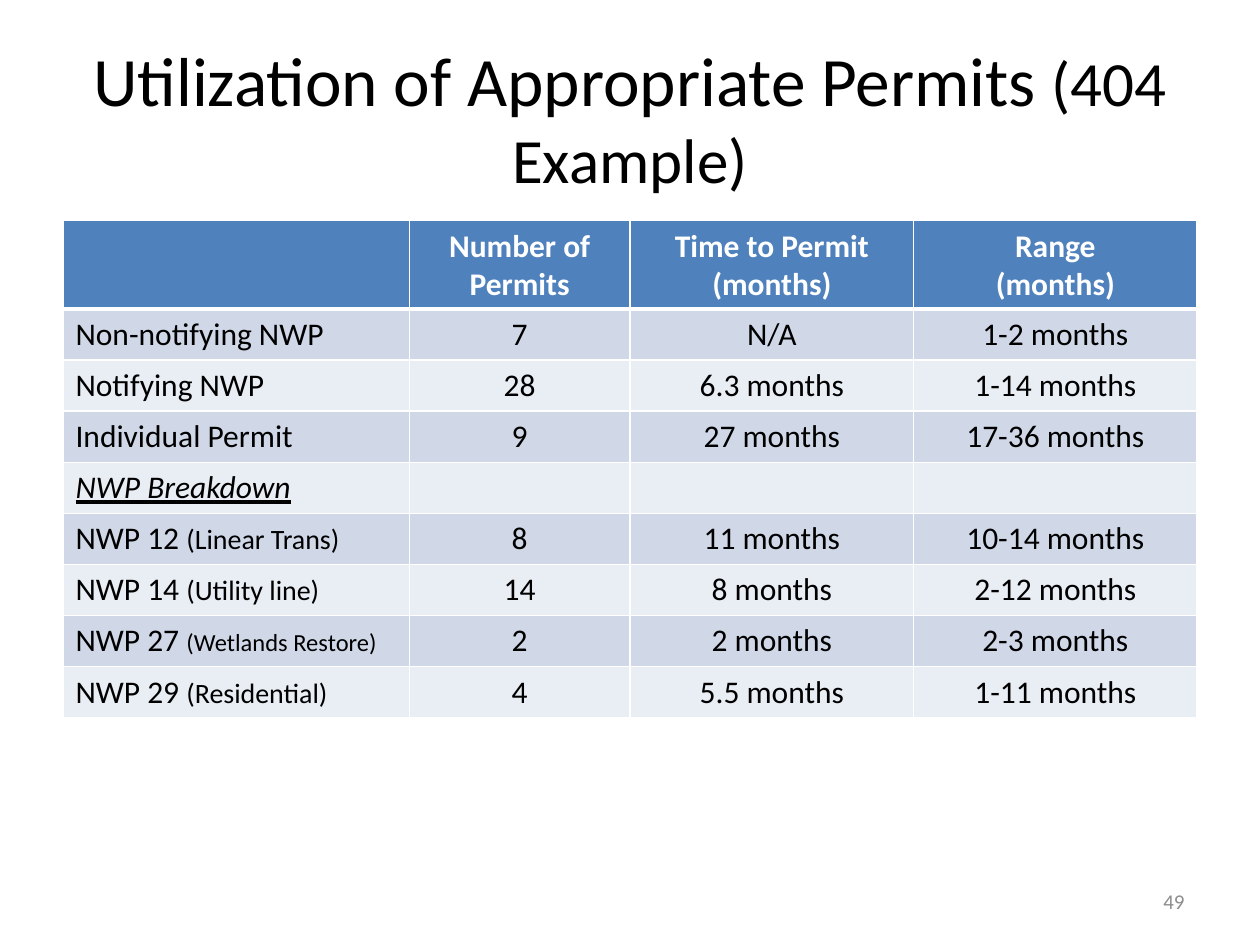
from lxml import etree
from pptx import Presentation
from pptx.dml.color import RGBColor
from pptx.enum.text import MSO_ANCHOR, PP_ALIGN
from pptx.oxml.ns import qn
from pptx.util import Cm, Pt

LEFT, CENTER, RIGHT = PP_ALIGN.LEFT, PP_ALIGN.CENTER, PP_ALIGN.RIGHT
MIDDLE = MSO_ANCHOR.MIDDLE
FONT = "Calibri"
BLACK, WHITE, GRAY = "000000", "FFFFFF", "8C8C8C"
BLUE, BANDS = "4F81BD", ("D0D8E8", "E9EDF4")

WIDTHS = (6.98, 4.45, 5.72, 5.71)
HEAD_H, ROW_H = 1.78, 1.03
HEADS = ([], ["Number of Permits"], ["Time to Permit", "(months)"],
         ["Range", "(months)"])
# Permit, small note, note size, number, time, range
ROWS = (
    ("Non-notifying NWP", "", 0, "7", "N/A", "1-2 months"),
    ("Notifying NWP", "", 0, "28", "6.3 months", "1-14 months"),
    ("Individual Permit", "", 0, "9", "27 months", "17-36 months"),
    ("NWP Breakdown", "", 0, "", "", ""),
    ("NWP 12 ", "(Linear Trans)", 16, "8", "11 months", "10-14 months"),
    ("NWP 14 ", "(Utility line)", 16, "14", "8 months", "2-12 months"),
    ("NWP 27 ", "(Wetlands Restore)", 14, "2", "2 months", "2-3 months"),
    ("NWP 29 ", "(Residential)", 16, "4", "5.5 months", "1-11 months"),
)


def color(code):
    return RGBColor.from_string(code)


def add_run(para, text, size=18, code=BLACK, bold=False):
    run = para.add_run()
    run.text = text
    font = run.font
    font.name, font.size, font.bold = FONT, Pt(size), bold
    font.color.rgb = color(code)
    return run


def add_box(slide, left, top, width, height, align):
    """Add a text box centred vertically and return its paragraph."""
    box = slide.shapes.add_textbox(Cm(left), Cm(top), Cm(width), Cm(height))
    frame = box.text_frame
    frame.word_wrap = True
    frame.vertical_anchor = MIDDLE
    para = frame.paragraphs[0]
    para.alignment = align
    return para


def style_cell(cell, fill, top=1, bottom=1):
    """Give a cell white borders (points) and a plain fill."""
    props = cell._tc.get_or_add_tcPr()
    for side, width in (("L", 1), ("R", 1), ("T", top), ("B", bottom)):
        line = etree.SubElement(props, qn(f"a:ln{side}"), w=str(Pt(width)))
        solid = etree.SubElement(line, qn("a:solidFill"))
        etree.SubElement(solid, qn("a:srgbClr"), val=WHITE)
    cell.fill.solid()
    cell.fill.fore_color.rgb = color(fill)


def fill_head(table):
    for col, lines in enumerate(HEADS):
        cell = table.cell(0, col)
        style_cell(cell, BLUE, bottom=3)
        frame = cell.text_frame
        for num, text in enumerate(lines):
            para = frame.add_paragraph() if num else frame.paragraphs[0]
            para.alignment = CENTER
            add_run(para, text, code=WHITE, bold=True)


def fill_row(table, row, data):
    name, note, size, *values = data
    for col in range(len(WIDTHS)):
        style_cell(table.cell(row, col), BANDS[(row - 1) % 2],
                   top=3 if row == 1 else 1)

    # Permit name, with its note in smaller type
    para = table.cell(row, 0).text_frame.paragraphs[0]
    para.alignment = LEFT
    run = add_run(para, name)
    if note:
        add_run(para, note, size)
    if not any(values):
        run.font.italic = run.font.underline = True

    # Centred values
    for col, text in enumerate(values, 1):
        para = table.cell(row, col).text_frame.paragraphs[0]
        para.alignment = CENTER
        if text:
            add_run(para, text)


def add_grid(slide):
    count = len(ROWS) + 1
    height = HEAD_H + ROW_H * len(ROWS)
    table = slide.shapes.add_table(
        count, len(WIDTHS), Cm(1.27), Cm(4.45), Cm(sum(WIDTHS)), Cm(height)
    ).table
    for col, width in zip(table.columns, WIDTHS):
        col.width = Cm(width)
    for num, row in enumerate(table.rows):
        row.height = Cm(ROW_H if num else HEAD_H)
    fill_head(table)
    for num, data in enumerate(ROWS, 1):
        fill_row(table, num, data)


def main():
    deck = Presentation()
    deck.slide_width, deck.slide_height = Cm(25.4), Cm(19.05)
    slide = deck.slides.add_slide(deck.slide_layouts[6])

    # Title
    title = add_box(slide, 1.27, 0.76, 22.86, 3.18, CENTER)
    add_run(title, "Utilization of Appropriate Permits ", 39.6)
    add_run(title, "(404 Example)", 36)

    # Permit table
    add_grid(slide)

    # Page number
    page = add_box(slide, 18.2, 17.66, 5.93, 1.01, RIGHT)
    add_run(page, "49", 12, GRAY)

    deck.save("out.pptx")


if __name__ == "__main__":
    main()
